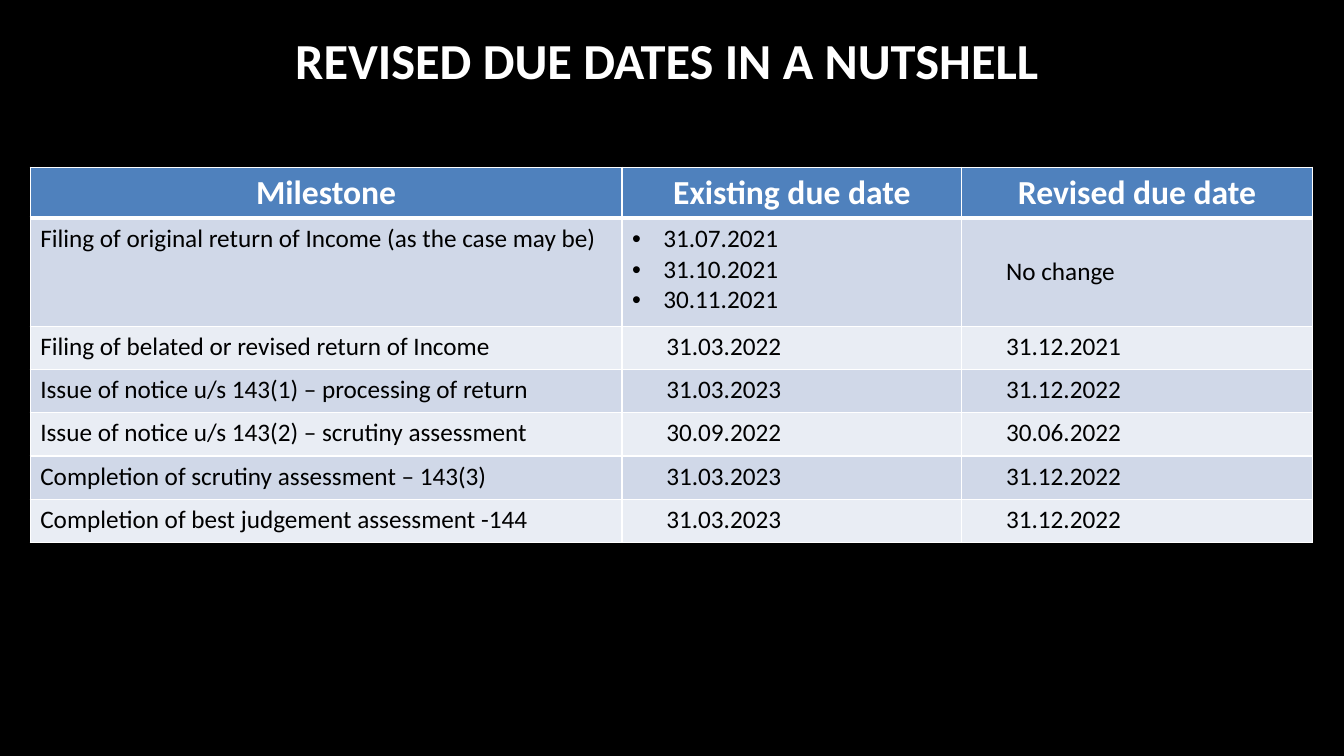
"""Build a slide with a table of existing and revised tax due dates."""
import pptx
import pptx.dml.color
import pptx.enum.text
import pptx.oxml
import pptx.oxml.ns
import pptx.util

ALIGN = pptx.enum.text.PP_ALIGN
ANCHOR = pptx.enum.text.MSO_ANCHOR
NS = pptx.oxml.ns.nsdecls("a")


def rgb(value):
    return pptx.dml.color.RGBColor.from_string(value)


def write(tf, text, size=18, color="000000", bold=False, align=ALIGN.LEFT, indent=0, bullet=False):
    for i, line in enumerate(text.split("\n")):
        p = tf.paragraphs[0] if i == 0 else tf.add_paragraph()
        p.alignment = align
        pPr = p._p.get_or_add_pPr()
        pPr.set("marL", str(pptx.util.Inches(indent)))
        pPr.set("indent", str(-pptx.util.Inches(indent) if bullet else 0))
        if bullet:
            pPr.append(pptx.oxml.parse_xml(f'<a:buFont {NS} typeface="Arial"/>'))
            pPr.append(pptx.oxml.parse_xml(f'<a:buChar {NS} char="•"/>'))
        r = p.add_run()
        r.text = line
        r.font.name = "Calibri"
        r.font.size = pptx.util.Pt(size)
        r.font.bold = bold
        r.font.color.rgb = rgb(color)


prs = pptx.Presentation()
prs.slide_width = pptx.util.Inches(13.33)
prs.slide_height = pptx.util.Inches(7.5)
W, H = prs.slide_width / 100, prs.slide_height / 100
s = prs.slides.add_slide(prs.slide_layouts[6])
s.background.fill.solid()
s.background.fill.fore_color.rgb = rgb("000000")

title = s.shapes.add_textbox(int(2.25 * W), int(1.73 * H), int(94.75 * W), int(12.27 * H))
tf = title.text_frame
tf.word_wrap = True
tf.vertical_anchor = ANCHOR.MIDDLE
write(tf, "REVISED DUE DATES IN A NUTSHELL", size=36, color="FFFFFF", bold=True, align=ALIGN.CENTER)

rows = [
    ("Milestone", "Existing due date", "Revised due date"),
    ("Filing of original return of Income (as the case may be)",
     "31.07.2021\n31.10.2021\n30.11.2021", "No change"),
    ("Filing of belated or revised return of Income", "31.03.2022", "31.12.2021"),
    ("Issue of notice u/s 143(1) – processing of return", "31.03.2023", "31.12.2022"),
    ("Issue of notice u/s 143(2) – scrutiny assessment", "30.09.2022", "30.06.2022"),
    ("Completion of scrutiny assessment – 143(3)", "31.03.2023", "31.12.2022"),
    ("Completion of best judgement assessment -144", "31.03.2023", "31.12.2022"),
]
col_shares = [44.03, 25.28, 26.1]
row_shares = [6.75, 14.27] + [5.73] * 5

table = s.shapes.add_table(
    len(rows), len(col_shares), int(2.25 * W), int(22.13 * H),
    int(sum(col_shares) * W), int(sum(row_shares) * H)).table
for column, share in zip(table.columns, col_shares):
    column.width = int(share * W)
for row, share in zip(table.rows, row_shares):
    row.height = int(share * H)

for i, row in enumerate(rows):
    for j, text in enumerate(row):
        cell = table.cell(i, j)
        tcPr = cell._tc.get_or_add_tcPr()
        for side in "LRTB":
            thick = (i == 0 and side == "B") or (i == 1 and side == "T")
            width = pptx.util.Pt(3 if thick else 1)
            tcPr.append(pptx.oxml.parse_xml(
                f'<a:ln{side} {NS} w="{width}"><a:solidFill>'
                f'<a:srgbClr val="FFFFFF"/></a:solidFill></a:ln{side}>'))
        cell.fill.solid()
        cell.fill.fore_color.rgb = rgb("4F81BD" if i == 0 else ("E9EDF4", "D0D8E8")[i % 2])
        if i == 0:
            write(cell.text_frame, text, size=24, color="FFFFFF", bold=True, align=ALIGN.CENTER)
        elif "\n" in text:
            write(cell.text_frame, text, indent=0.31, bullet=True)
        else:
            write(cell.text_frame, text, indent=0.34 if j else 0)
        if text == "No change":
            cell.vertical_anchor = ANCHOR.MIDDLE

prs.save("out.pptx")
